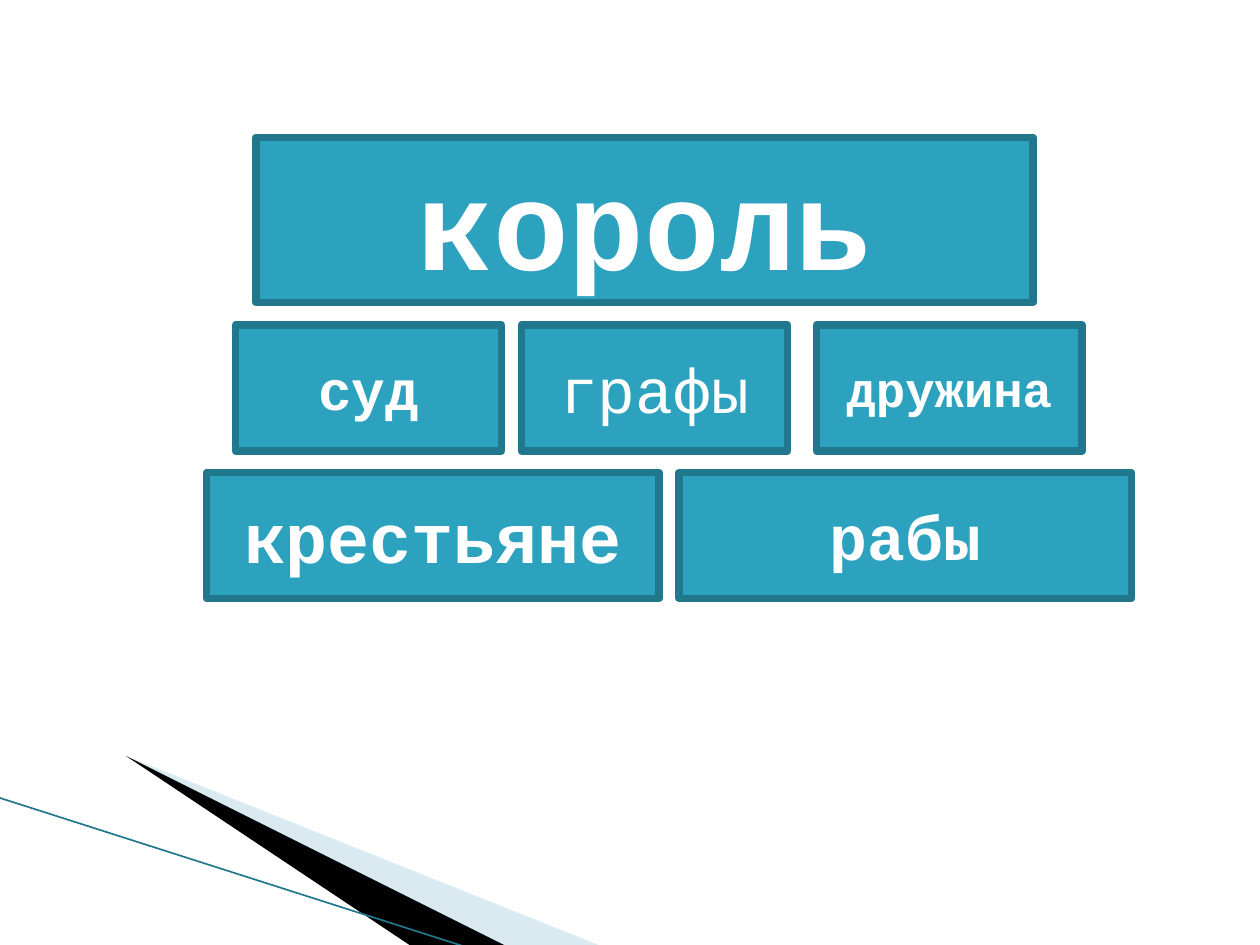
from dataclasses import dataclass

from lxml.etree import SubElement
from pptx import Presentation
from pptx.dml.color import RGBColor
from pptx.enum.shapes import MSO_CONNECTOR, MSO_SHAPE
from pptx.enum.text import MSO_ANCHOR, PP_ALIGN
from pptx.oxml.ns import qn
from pptx.shapes.autoshape import Shape
from pptx.slide import Slide
from pptx.util import Inches, Pt

COLORS = {
    "background": "FFFFFF",
    "box": "2DA2BF",
    "border": "21788D",
    "text": "FFFFFF",
    "pale_wedge": "A0CBDC",
    "dark_wedge": "000000",
}


@dataclass(frozen=True)
class Box:
    text: str
    left: float
    size: int
    bold: bool = True


@dataclass(frozen=True)
class Tier:
    top: float
    width: float
    height: float
    boxes: tuple[Box, ...]


@dataclass(frozen=True)
class Wedge:
    points: tuple[tuple[float, float], ...]
    color: str
    opacity: int = 100


TIERS = (
    Tier(1.09, 6.17, 1.31, (Box("король", 2.03, 72),)),
    Tier(2.58, 2.11, 1, (
        Box("суд", 1.87, 32),
        Box("графы", 4.14, 36, bold=False),
        Box("дружина", 6.48, 28),
    )),
    Tier(3.75, 3.59, 1, (Box("крестьяне", 1.64, 40), Box("рабы", 5.39, 36))),
)

WEDGES = (
    Wedge(((0.55, 6.5), (5.95, 7.51), (4.56, 7.51)), "pale_wedge", 40),
    Wedge(((0.53, 6.49), (4.57, 7.51), (3.72, 7.52)), "dark_wedge"),
)


def color(name: str) -> RGBColor:
    return RGBColor.from_string(COLORS[name])


def write_text(shape: Shape, text: str, *, size: int, bold: bool) -> None:
    frame = shape.text_frame
    frame.word_wrap = True
    frame.vertical_anchor = MSO_ANCHOR.MIDDLE
    paragraph = frame.paragraphs[0]
    paragraph.alignment = PP_ALIGN.CENTER
    run = paragraph.add_run()
    run.text = text
    run.font.name = "Courier New"
    run.font.size = Pt(size)
    run.font.bold = bold
    run.font.color.rgb = color("text")


def fill_shape(shape: Shape, name: str) -> None:
    shape.shadow.inherit = False
    shape.fill.solid()
    shape.fill.fore_color.rgb = color(name)


def draw_wedge(slide: Slide, wedge: Wedge) -> None:
    start, *rest = wedge.points
    builder = slide.shapes.build_freeform(*start, scale=Inches(1))
    builder.add_line_segments(rest, close=True)
    shape = builder.convert_to_shape()
    fill_shape(shape, wedge.color)
    shape.line.fill.background()
    if wedge.opacity < 100:
        fill_color = shape._element.spPr.find(f"{qn('a:solidFill')}/{qn('a:srgbClr')}")
        SubElement(fill_color, qn("a:alpha"), val=str(wedge.opacity * 1000))


def draw_edge(slide: Slide) -> None:
    connector = slide.shapes.add_connector(
        MSO_CONNECTOR.STRAIGHT, Inches(-0.01), Inches(6.33), Inches(3.71), Inches(7.52)
    )
    connector.line.color.rgb = color("border")
    connector.line.width = Pt(0.95)
    SubElement(connector._element.spPr, qn("a:effectLst"))


def draw_tier(slide: Slide, tier: Tier) -> None:
    for box in tier.boxes:
        shape = slide.shapes.add_shape(
            MSO_SHAPE.RECTANGLE,
            Inches(box.left),
            Inches(tier.top),
            Inches(tier.width),
            Inches(tier.height),
        )
        fill_shape(shape, "box")
        shape.line.color.rgb = color("border")
        shape.line.width = Pt(4.33)
        write_text(shape, box.text, size=box.size, bold=box.bold)


def main() -> None:
    presentation = Presentation()
    presentation.slide_width = Inches(10)
    presentation.slide_height = Inches(7.5)
    slide = presentation.slides.add_slide(presentation.slide_layouts[6])
    slide.background.fill.solid()
    slide.background.fill.fore_color.rgb = color("background")
    for wedge in WEDGES:
        draw_wedge(slide, wedge)
    draw_edge(slide)
    for tier in TIERS:
        draw_tier(slide, tier)
    presentation.save("out.pptx")


if __name__ == "__main__":
    main()
